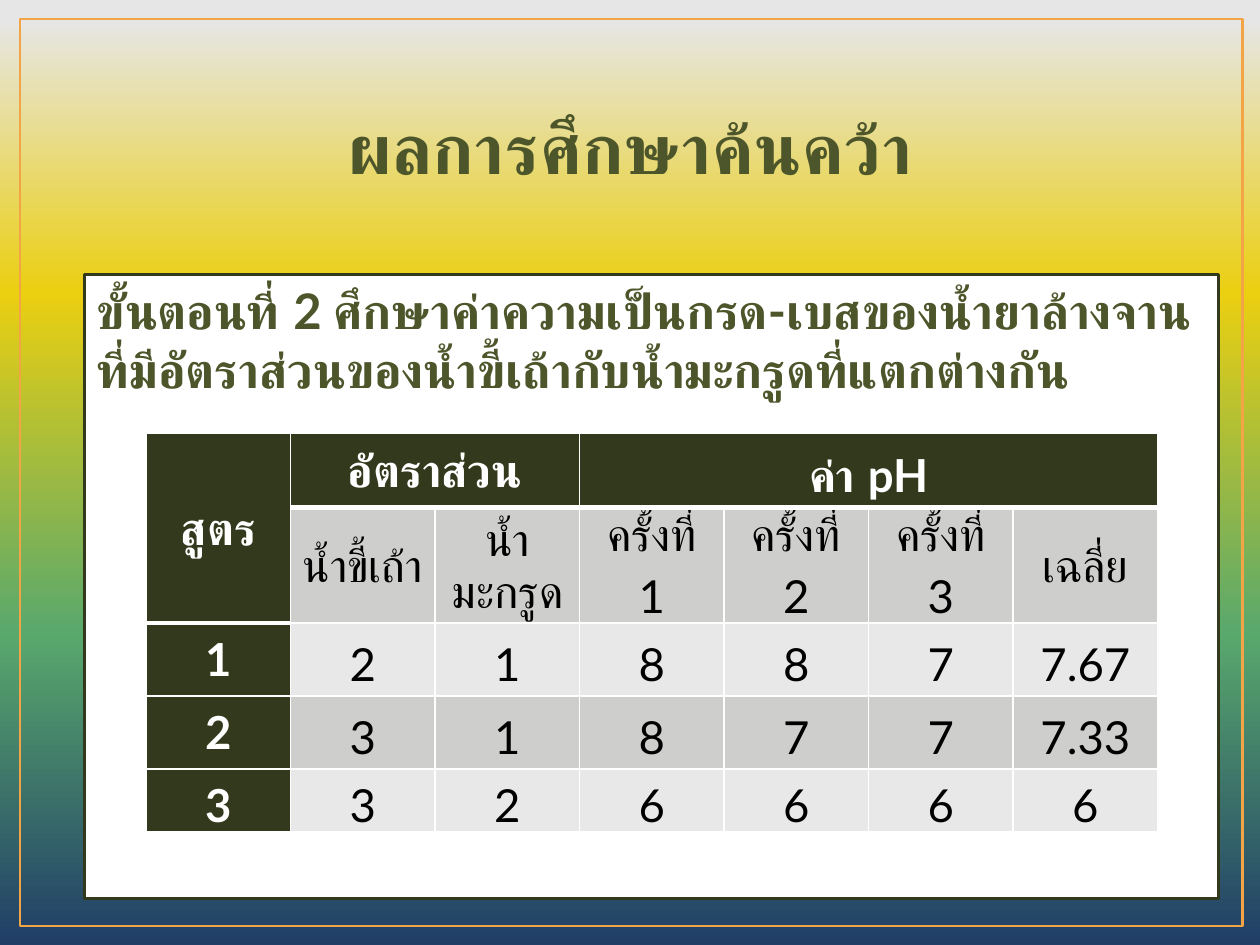
import dataclasses

import lxml.etree
import pptx
import pptx.dml.color
import pptx.enum.dml
import pptx.enum.shapes
import pptx.enum.text
import pptx.oxml.ns
import pptx.util

Inches = pptx.util.Inches
Pt = pptx.util.Pt
RGB = pptx.dml.color.RGBColor.from_string
ANCHOR = pptx.enum.text.MSO_ANCHOR
ALIGN = pptx.enum.text.PP_ALIGN


@dataclasses.dataclass(frozen=True)
class Theme:
    """Colours, font and type sizes of the slide."""
    backdrop: tuple = ((2, "E6E6E6"), (31, "EBCF11"), (67, "59A86C"), (100, "203E67"))
    frame: str = "F3A447"
    heading: str = "4D562A"
    heading_edge: str = "1A1D0E"
    dark: str = "33391C"
    white: str = "FFFFFF"
    black: str = "000000"
    bands: tuple = ("E8E8E8", "CECECD")
    font: str = "Lato"
    title_size: int = 40
    step_size: int = 28
    table_size: int = 26


THEME = Theme()

HEADINGS = (("สูตร", (0, 0), (1, 0)), ("อัตราส่วน", (0, 1), (0, 2)), ("ค่า pH", (0, 3), (0, 6)))
ROWS = (
    ("", "น้ำขี้เถ้า", "น้ำมะกรูด", "ครั้งที่ 1", "ครั้งที่ 2", "ครั้งที่ 3", "เฉลี่ย"),
    ("1", "2", "1", "8", "8", "7", "7.67"),
    ("2", "3", "1", "8", "7", "7", "7.33"),
    ("3", "3", "2", "6", "6", "6", "6"),
)
ROW_HEIGHTS = (0.59, 0.88, 0.58, 0.58, 0.41)


def apply(target, values):
    """Set each named attribute on the target."""
    for name, value in values.items():
        setattr(target, name, value)


def write(text_frame, words, size, color, bold=True, **paragraph_format):
    """Write one paragraph and return its run."""
    paragraph = text_frame.paragraphs[0]
    apply(paragraph, paragraph_format)
    run = paragraph.add_run()
    run.text = words
    apply(run.font, {"name": THEME.font, "size": Pt(size), "bold": bold})
    run.font.color.rgb = RGB(color)
    return run


def add_line(parent, tag, index, color, width):
    """Insert a solid line element of the given tag into its parent."""
    line = lxml.etree.Element(pptx.oxml.ns.qn(tag), w=str(Pt(width)))
    fill = lxml.etree.SubElement(line, pptx.oxml.ns.qn("a:solidFill"))
    lxml.etree.SubElement(fill, pptx.oxml.ns.qn("a:srgbClr"), val=color)
    parent.insert(index, line)


def paint_backdrop(slide):
    """Fill the background with the vertical gradient."""
    fill = slide.background.fill
    fill.gradient()
    fill.gradient_angle = 270
    stops = slide.element.xpath(".//p:bg//a:gsLst")[0]
    for stop in list(stops):
        stops.remove(stop)
    for percent, color in THEME.backdrop:
        stop = lxml.etree.SubElement(stops, pptx.oxml.ns.qn("a:gs"), pos=str(percent * 1000))
        lxml.etree.SubElement(stop, pptx.oxml.ns.qn("a:srgbClr"), val=color)


def add_panel(slide, box, line_color, line_width, fill_color=None):
    """Add an outlined rectangle, filled when a colour is given."""
    panel = slide.shapes.add_shape(pptx.enum.shapes.MSO_SHAPE.RECTANGLE, *map(Inches, box))
    panel.shadow.inherit = False
    panel.line.color.rgb = RGB(line_color)
    panel.line.width = Pt(line_width)
    if fill_color:
        panel.fill.solid()
        panel.fill.fore_color.rgb = RGB(fill_color)
    else:
        panel.fill.background()
    return panel


def place_title(slide, box):
    """Place and format the slide title."""
    title = slide.shapes.title
    apply(title, dict(zip(("left", "top", "width", "height"), map(Inches, box))))
    apply(title.text_frame, {"vertical_anchor": ANCHOR.BOTTOM, "word_wrap": True})
    run = write(title.text_frame, "ผลการศึกษาค้นคว้า", THEME.title_size, THEME.heading,
                alignment=ALIGN.CENTER)
    properties = run.font._element
    properties.set("spc", "50")
    add_line(properties, "a:ln", 0, THEME.heading_edge, 1.05)


def place_step(slide, box):
    """Place the white panel that describes the study step."""
    step = add_panel(slide, box, THEME.dark, 2, THEME.white)
    apply(step.text_frame, {"vertical_anchor": ANCHOR.TOP, "word_wrap": True})
    write(step.text_frame,
          "ขั้นตอนที่ 2 ศึกษาค่าความเป็นกรด-เบสของน้ำยาล้างจาน"
          "ที่มีอัตราส่วนของน้ำขี้เถ้ากับน้ำมะกรูดที่แตกต่างกัน",
          THEME.step_size, THEME.heading, alignment=ALIGN.LEFT)


def format_cell(cell, row, column):
    """Set the margins, anchor, fill and borders of one cell."""
    dark = row == 0 or column == 0
    heading = row == 0 or (row == 1 and column == 0)
    apply(cell, {
        "margin_left": Inches(0.07), "margin_right": Inches(0.07),
        "margin_top": 0, "margin_bottom": 0,
        "vertical_anchor": ANCHOR.TOP if column == 0 and row > 1 else ANCHOR.MIDDLE,
    })
    cell.fill.solid()
    cell.fill.fore_color.rgb = RGB(THEME.dark if dark else THEME.bands[row % 2])
    below_heading = row == 1 or (row == 2 and column == 0)
    widths = (1, 1, 3 if below_heading else 1, 3 if heading else 1)
    for index, (side, width) in enumerate(zip("LRTB", widths)):
        add_line(cell._tc.get_or_add_tcPr(), f"a:ln{side}", index, THEME.white, width)


def place_results(slide, box):
    """Place the table of pH readings by formula."""
    columns = len(ROWS[0])
    table = slide.shapes.add_table(len(ROW_HEIGHTS), columns, *map(Inches, box)).table
    for column in table.columns:
        column.width = Inches(box[2] / columns)
    for row, height in zip(table.rows, ROW_HEIGHTS):
        row.height = Inches(height)
    for row in range(len(ROW_HEIGHTS)):
        for column in range(columns):
            format_cell(table.cell(row, column), row, column)
    centred = {"alignment": ALIGN.CENTER, "line_spacing": 1.15}
    for words, first, last in HEADINGS:
        table.cell(*first).merge(table.cell(*last))
        write(table.cell(*first).text_frame, words, THEME.table_size, THEME.white, **centred)
    for row, values in enumerate(ROWS, 1):
        for column, words in enumerate(values):
            if words:
                label = column == 0
                write(table.cell(row, column).text_frame, words, THEME.table_size,
                      THEME.white if label else THEME.black, label, **centred)


def main():
    """Build and save the presentation."""
    deck = pptx.Presentation()
    apply(deck, {"slide_width": Inches(10), "slide_height": Inches(7.5)})
    slide = deck.slides.add_slide(deck.slide_layouts[5])
    paint_backdrop(slide)
    add_panel(slide, (0.16, 0.15, 9.7, 7.2), THEME.frame, 1.5)
    place_title(slide, (0.5, 0.3, 9, 1.25))
    place_step(slide, (0.67, 2.18, 9, 4.95))
    place_results(slide, (1.16, 3.44, 8.03, 3.13))
    deck.save("out.pptx")


if __name__ == "__main__":
    main()
